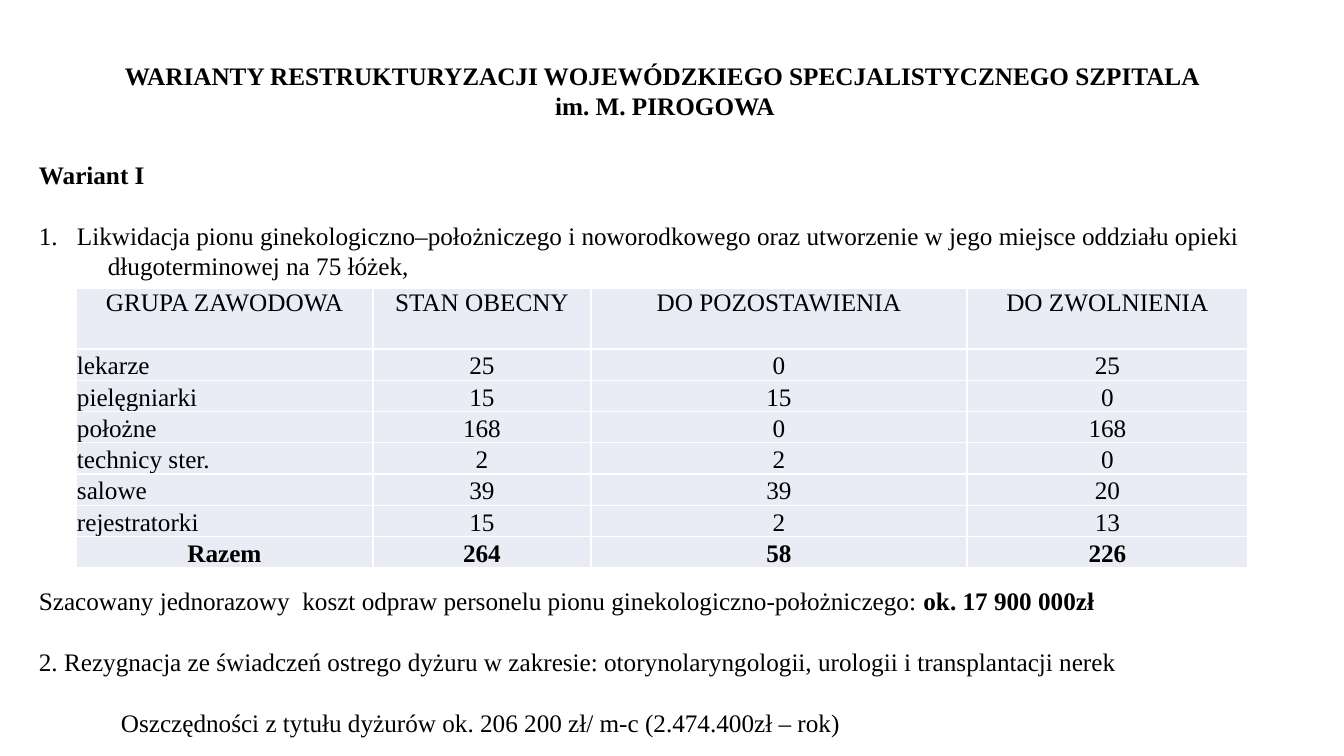
from lxml.etree import SubElement
from pptx import Presentation
from pptx.dml.color import RGBColor
from pptx.enum.text import MSO_ANCHOR, PP_ALIGN
from pptx.oxml.ns import qn
from pptx.util import Pt

SCALE = 914400 / 100.8


def px(n):
    return round(n * SCALE)


def color(code):
    return RGBColor.from_string(code)


class Page:
    face = "Times New Roman"
    size = 18
    ink = "000000"
    pale = "E9EBF5"
    rule = "FFFFFF"

    def __init__(self, deck):
        self.slide = deck.slides.add_slide(deck.slide_layouts[6])

    def style(self, para, bold=False, align=PP_ALIGN.LEFT):
        para.alignment = align
        font = para.font
        font.name = self.face
        font.size = Pt(self.size)
        font.bold = bold
        font.color.rgb = color(self.ink)

    def frame(self, left, top, width, height):
        box = self.slide.shapes.add_textbox(*map(px, (left, top, width, height)))
        box.text_frame.word_wrap = True
        return box.text_frame

    def title(self, text, *place):
        para = self.frame(*place).paragraphs[0]
        para.text = text
        self.style(para, True, PP_ALIGN.CENTER)

    def body(self, items, *place):
        frame = self.frame(*place)
        for i, (gap, indent, number, bold, text, strong) in enumerate(items):
            para = frame.add_paragraph() if i else frame.paragraphs[0]
            para.text = text
            self.style(para, bold)
            para.space_before = Pt(gap)
            if strong:
                run = para.add_run()
                run.text = strong
                run.font.bold = True
            props = para._p.get_or_add_pPr()
            props.set("marL", str(px(indent)))
            if number:
                props.set("indent", str(-px(indent)))
                SubElement(props, qn("a:buAutoNum"), type="arabicPeriod")

    def border(self, cell):
        props = cell._tc.get_or_add_tcPr()
        for side in ("lnL", "lnR", "lnT", "lnB"):
            line = SubElement(props, qn("a:" + side), w=str(Pt(1)))
            fill = SubElement(line, qn("a:solidFill"))
            SubElement(fill, qn("a:srgbClr"), val=self.rule)

    def cell(self, cell, text, anchor, bold, align):
        cell.margin_left = cell.margin_right = cell.margin_top = px(1)
        cell.margin_bottom = 0
        cell.vertical_anchor = anchor
        self.border(cell)
        cell.fill.solid()
        cell.fill.fore_color.rgb = color(self.pale)
        para = cell.text_frame.paragraphs[0]
        para.text = text
        self.style(para, bold, align)

    def table(self, rows, left, top, widths, head, step):
        last = len(rows) - 1
        place = left, top, sum(widths), head + last * step
        grid = self.slide.shapes.add_table(len(rows), len(widths), *map(px, place)).table
        grid.first_row = grid.horz_banding = False
        for col, width in zip(grid.columns, widths):
            col.width = px(width)
        for r, row in enumerate(rows):
            grid.rows[r].height = px(step if r else head)
            anchor = MSO_ANCHOR.BOTTOM if r else MSO_ANCHOR.TOP
            for c, text in enumerate(row):
                label = c == 0 and 0 < r < last
                align = PP_ALIGN.LEFT if label else PP_ALIGN.CENTER
                self.cell(grid.cell(r, c), text, anchor, r == last, align)


STAFF = [
    ("GRUPA ZAWODOWA", "STAN OBECNY", "DO POZOSTAWIENIA", "DO ZWOLNIENIA"),
    ("lekarze", "25", "0", "25"),
    ("pielęgniarki", "15", "15", "0"),
    ("położne", "168", "0", "168"),
    ("technicy ster.", "2", "2", "0"),
    ("salowe", "39", "39", "20"),
    ("rejestratorki", "15", "2", "13"),
    ("Razem", "264", "58", "226"),
]

ITEMS = [
    (0, 0, False, True, "Wariant I", ""),
    (22, 38, True, False, "Likwidacja pionu ginekologiczno–położniczego i noworodkowego "
     "oraz utworzenie w jego miejsce oddziału opieki", ""),
    (0, 69, False, False, "długoterminowej na 75 łóżek,", ""),
    (218, 0, False, False, "Szacowany jednorazowy  koszt odpraw personelu pionu "
     "ginekologiczno-położniczego: ", "ok. 17 900 000zł"),
    (22, 0, False, False, "2. Rezygnacja ze świadczeń ostrego dyżuru w zakresie: "
     "otorynolaryngologii, urologii i transplantacji nerek", ""),
    (22, 82, False, False, "Oszczędności z tytułu dyżurów ok. 206 200 zł/ m-c "
     "(2.474.400zł – rok)", ""),
]


def main():
    deck = Presentation()
    deck.slide_width = px(1344)
    deck.slide_height = px(756)
    page = Page(deck)
    page.title("WARIANTY RESTRUKTURYZACJI WOJEWÓDZKIEGO SPECJALISTYCZNEGO SZPITALA \v"
               "im. M. PIROGOWA", 29, 55, 1272, 72)
    page.body(ITEMS, 29, 154, 1272, 651)
    page.table(STAFF, 76, 288, (297, 218, 376, 281), 61, 31)
    deck.save("out.pptx")


if __name__ == "__main__":
    main()
